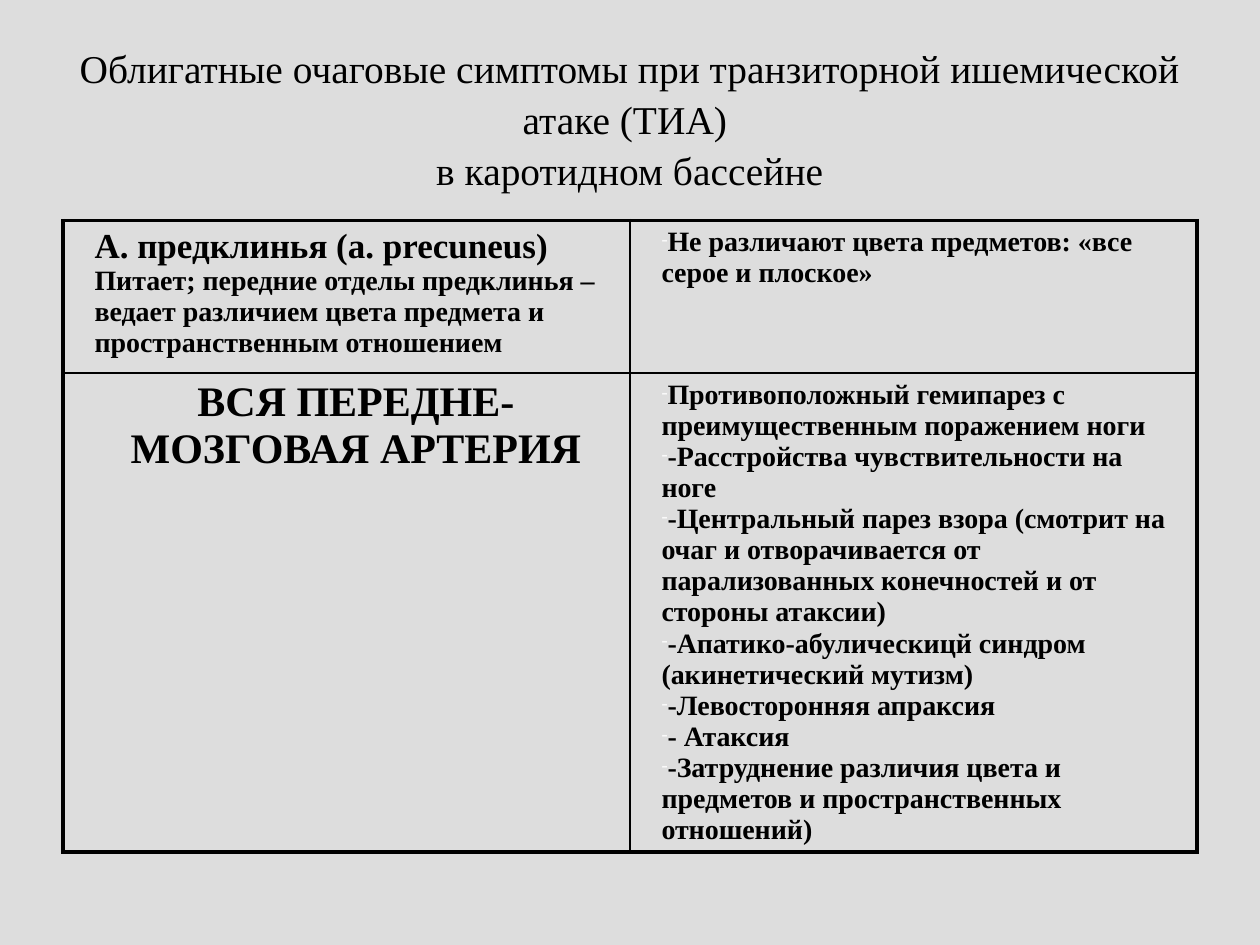
from typing import NamedTuple

from lxml.etree import SubElement
from pptx import Presentation
from pptx.dml.color import RGBColor
from pptx.enum.text import MSO_ANCHOR, MSO_AUTO_SIZE, PP_ALIGN
from pptx.oxml.ns import qn
from pptx.util import Inches, Pt

BACKGROUND = RGBColor(0xDD, 0xDD, 0xDD)
BLACK = RGBColor(0, 0, 0)
BULLET_COLOR = RGBColor(0xF9, 0xF9, 0xF9)
FONT = "Times New Roman"
OUTER, INNER = 2.25, 1
COLUMN_WIDTHS = (4.5, 4.5)
ROW_HEIGHTS = (1.21, 2.57)


class Line(NamedTuple):
    text: str
    size: float = 16
    bullet: bool = False
    align: PP_ALIGN = PP_ALIGN.LEFT


def symptom(text: str) -> Line:
    return Line(text, bullet=True)


# Each row pairs an artery with the symptoms of its territory
ROWS = (
    (
        (
            Line("А. предклинья (a. precuneus)", 20),
            Line("Питает; передние отделы предклинья – ведает различием "
                 "цвета предмета и пространственным отношением"),
        ),
        (symptom("Не различают цвета предметов: «все серое и плоское»"),),
    ),
    (
        (Line("ВСЯ ПЕРЕДНЕ-МОЗГОВАЯ АРТЕРИЯ", 24, align=PP_ALIGN.CENTER),),
        (
            symptom("Противоположный гемипарез с преимущественным поражением ноги"),
            symptom("-Расстройства чувствительности на ноге"),
            symptom("-Центральный парез взора (смотрит на очаг и отворачивается "
                    "от парализованных конечностей и от стороны атаксии)"),
            symptom("-Апатико-абулическицй синдром (акинетический мутизм)"),
            symptom("-Левосторонняя апраксия"),
            symptom("- Атаксия"),
            symptom("-Затруднение различия цвета и предметов и пространственных отношений)"),
        ),
    ),
)


def format_font(font, size: float, bold: bool) -> None:
    for name, value in {"name": FONT, "size": Pt(size), "bold": bold}.items():
        setattr(font, name, value)
    font.color.rgb = BLACK


def add_bullet(properties) -> None:
    color = SubElement(properties, qn("a:buClr"))
    SubElement(color, qn("a:srgbClr"), val=str(BULLET_COLOR))
    SubElement(properties, qn("a:buSzPct"), val="65000")
    SubElement(properties, qn("a:buChar"), char="-")


def write_cell(cell, lines: tuple[Line, ...]) -> None:
    frame = cell.text_frame
    for index, line in enumerate(lines):
        paragraph = frame.add_paragraph() if index else frame.paragraphs[0]
        paragraph.alignment = line.align
        run = paragraph.add_run()
        run.text = line.text
        format_font(run.font, line.size, True)
        properties = paragraph._p.get_or_add_pPr()
        properties.set("marL", str(Inches(0.15)))
        properties.set("indent", "0")
        if line.bullet:
            add_bullet(properties)


def draw_borders(cell, row: int, column: int) -> None:
    on_edge = {
        "a:lnL": column == 0,
        "a:lnR": column == len(COLUMN_WIDTHS) - 1,
        "a:lnT": row == 0,
        "a:lnB": row == len(ROW_HEIGHTS) - 1,
    }
    properties = cell._tc.get_or_add_tcPr()
    for tag, outer in on_edge.items():
        border = SubElement(properties, qn(tag), w=str(Pt(OUTER if outer else INNER)))
        fill = SubElement(border, qn("a:solidFill"))
        SubElement(fill, qn("a:srgbClr"), val=str(BLACK))


def add_title(slide) -> None:
    title = slide.shapes.title
    place = {"left": 0.5, "top": 0.3, "width": 9, "height": 1.25}
    for name, value in place.items():
        setattr(title, name, Inches(value))
    frame = title.text_frame
    frame.auto_size = MSO_AUTO_SIZE.NONE
    frame.vertical_anchor = MSO_ANCHOR.MIDDLE
    frame.text = ("Облигатные очаговые симптомы при транзиторной ишемической "
                  "атаке (ТИА) \vв каротидном бассейне")
    paragraph = frame.paragraphs[0]
    paragraph.alignment = PP_ALIGN.CENTER
    paragraph.line_spacing = 1.08
    for run in paragraph.runs:
        format_font(run.font, 22.5, False)


def add_symptom_table(slide) -> None:
    table_frame = slide.shapes.add_table(
        len(ROW_HEIGHTS), len(COLUMN_WIDTHS),
        Inches(0.5), Inches(1.75), Inches(9), Inches(5.33))
    table = table_frame.table
    table.first_row = table.horz_banding = False
    for column, width in zip(table.columns, COLUMN_WIDTHS):
        column.width = Inches(width)
    for row, height in zip(table.rows, ROW_HEIGHTS):
        row.height = Inches(height)
    table_frame.height = Inches(5.33)
    for r, row in enumerate(ROWS):
        for c, lines in enumerate(row):
            cell = table.cell(r, c)
            write_cell(cell, lines)
            draw_borders(cell, r, c)
            cell.fill.background()


def main() -> None:
    presentation = Presentation()
    presentation.slide_width = Inches(10)
    presentation.slide_height = Inches(7.5)
    slide = presentation.slides.add_slide(presentation.slide_layouts[5])
    slide.background.fill.solid()
    slide.background.fill.fore_color.rgb = BACKGROUND
    add_title(slide)
    add_symptom_table(slide)
    presentation.save("out.pptx")


if __name__ == "__main__":
    main()
